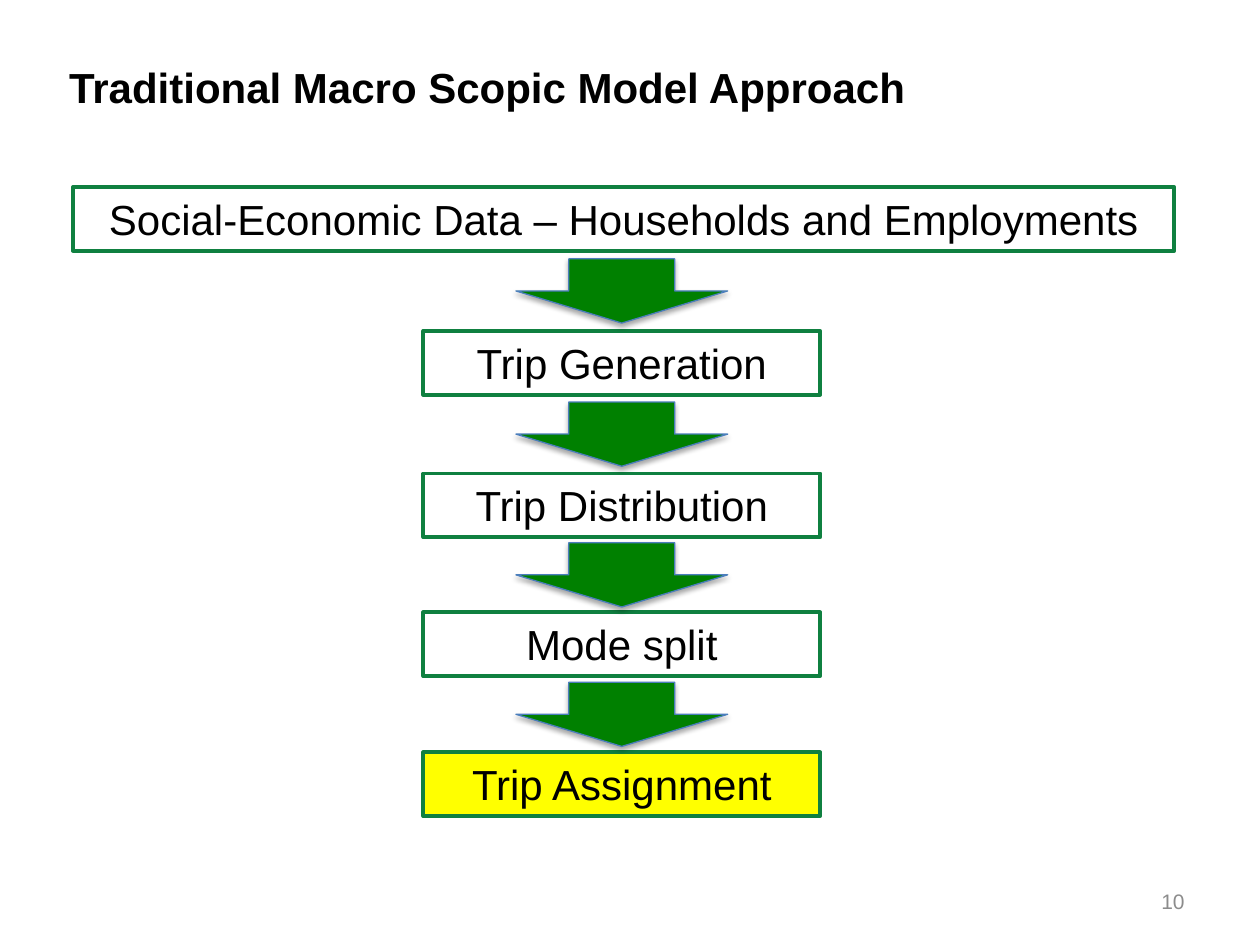
from dataclasses import dataclass
from itertools import pairwise

from lxml import etree
from pptx import Presentation
from pptx import util as u
from pptx.dml.color import RGBColor
from pptx.enum import shapes, text
from pptx.oxml.ns import qn


@dataclass(frozen=True)
class Theme:
    font: str = "Arial"
    ink: str = "000000"
    muted: str = "8C8C8C"
    border: str = "0F8040"
    arrow: str = "008000"
    arrow_edge: str = "4B7EBC"
    highlight: str = "FFFF00"
    body_size: float = 24
    number_size: float = 12
    border_width: float = 2.25
    edge_width: float = 0.75


class FlowSlide:
    """Draws titled flow steps on one slide in a shared theme."""

    def __init__(self, slide, theme):
        self.slide = slide
        self.theme = theme

    def set_words(self, frame, words, size, color, align, bold=False):
        frame.text = words
        line = frame.paragraphs[0]
        line.alignment = align
        font = line.runs[0].font
        font.name, font.size, font.bold = self.theme.font, u.Pt(size), bold
        font.color.rgb = RGBColor.from_string(color)
        return line

    def label(self, bounds, words, size, color, align, anchor, bold=False, wrap=True):
        frame = self.slide.shapes.add_textbox(*map(u.Pt, bounds)).text_frame
        frame.word_wrap = wrap
        frame.vertical_anchor = anchor
        self.set_words(frame, words, size, color, align, bold)

    def block(self, kind, bounds, fill, edge, edge_width):
        block = self.slide.shapes.add_shape(kind, *map(u.Pt, bounds))
        block.shadow.inherit = False
        if fill:
            block.fill.solid()
            block.fill.fore_color.rgb = RGBColor.from_string(fill)
        else:
            block.fill.background()
        block.line.color.rgb = RGBColor.from_string(edge)
        block.line.width = u.Pt(edge_width)
        return block

    def step(self, bounds, words, fill=None):
        theme = self.theme
        step = self.block(shapes.MSO_SHAPE.RECTANGLE, bounds, fill,
                          theme.border, theme.border_width)
        frame = step.text_frame
        frame.word_wrap = True
        frame.auto_size = text.MSO_AUTO_SIZE.SHAPE_TO_FIT_TEXT
        frame.vertical_anchor = text.MSO_ANCHOR.TOP
        line = self.set_words(frame, words, theme.body_size, theme.ink,
                              text.PP_ALIGN.CENTER)
        line.space_after = u.Pt(12)

    def arrow(self, bounds):
        theme = self.theme
        arrow = self.block(shapes.MSO_SHAPE.DOWN_ARROW, bounds, theme.arrow,
                           theme.arrow_edge, theme.edge_width)
        effects = arrow.element.spPr.find(qn("a:effectLst"))
        shadow = etree.SubElement(effects, qn("a:outerShdw"), blurRad=str(u.Pt(3.1)),
                                  dist=str(u.Pt(1.8)), dir="5400000", rotWithShape="0")
        tint = etree.SubElement(shadow, qn("a:srgbClr"), val=theme.ink)
        etree.SubElement(tint, qn("a:alpha"), val="35000")


def main():
    deck = Presentation()
    deck.slide_width, deck.slide_height = u.Pt(720), u.Pt(540)
    theme = Theme()
    flow = FlowSlide(deck.slides.add_slide(deck.slide_layouts[6]), theme)

    flow.label((32.4, 31.7, 496.8, 36), "Traditional Macro Scopic Model Approach",
               theme.body_size, theme.ink, text.PP_ALIGN.LEFT, text.MSO_ANCHOR.TOP,
               bold=True, wrap=False)

    step_height, arrow_width, arrow_height = 36.35, 121, 36.7
    wide, narrow = (41.8, 629.3), (241.9, 226.8)
    steps = [
        ("Social-Economic Data – Households and Employments", 107, wide, None),
        ("Trip Generation", 189.2, narrow, None),
        ("Trip Distribution", 270.6, narrow, None),
        ("Mode split", 350, narrow, None),
        ("Trip Assignment", 430, narrow, theme.highlight),
    ]
    for words, top, (left, width), fill in steps:
        flow.step((left, top, width, step_height), words, fill)

    arrow_left = narrow[0] + (narrow[1] - arrow_width) / 2
    for (_, upper, *_), (_, lower, *_) in pairwise(steps):
        arrow_top = (upper + step_height + lower - arrow_height) / 2
        flow.arrow((arrow_left, arrow_top, arrow_width, arrow_height))

    flow.label((516, 500.5, 168, 28.75), "10", theme.number_size, theme.muted,
               text.PP_ALIGN.RIGHT, text.MSO_ANCHOR.MIDDLE)
    deck.save("out.pptx")


if __name__ == "__main__":
    main()
